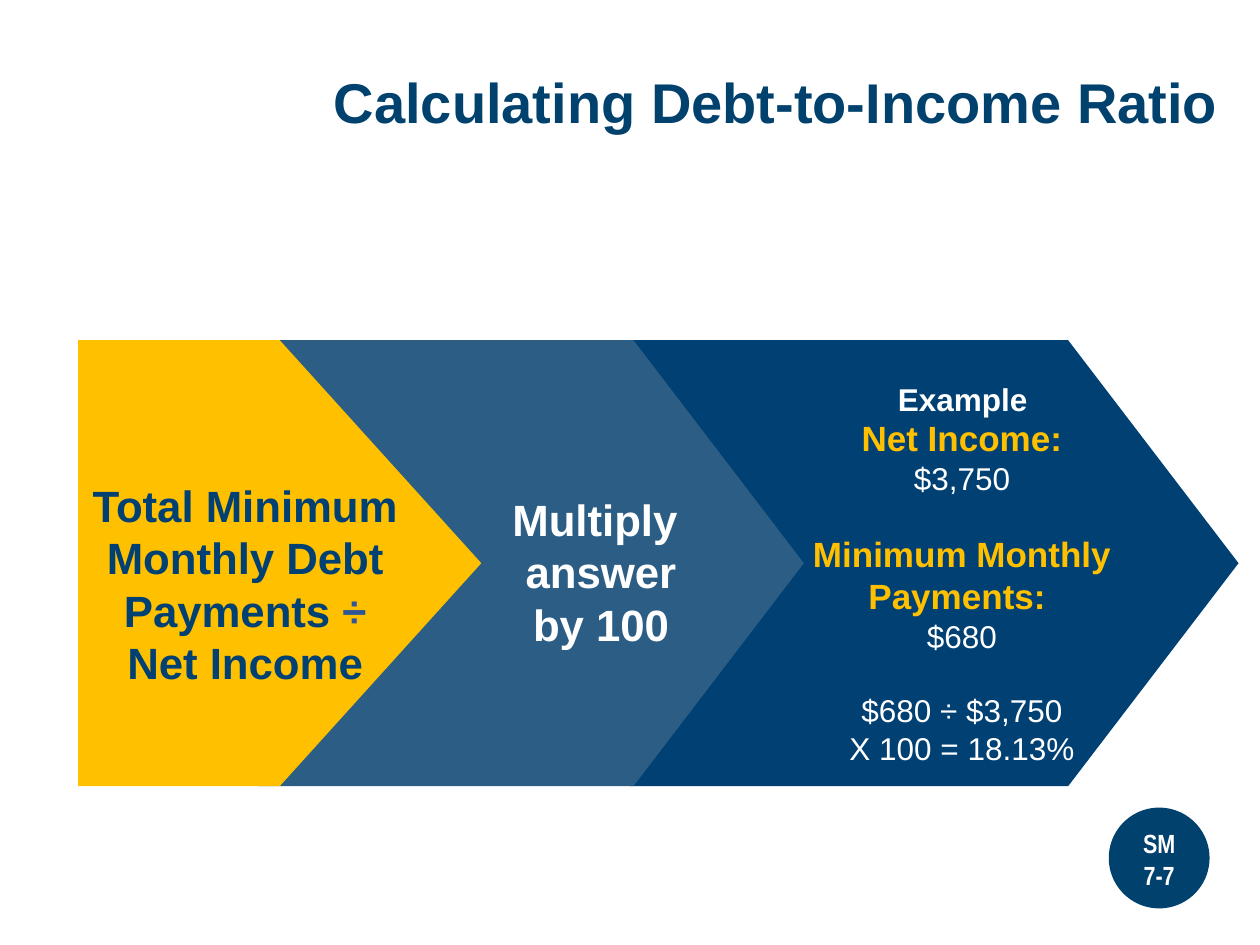
from pptx import Presentation
from pptx import util as u
from pptx.dml import color
from pptx.enum import shapes, text

NAVY, DEEP, STEEL = "004072", "00416D", "2C5D85"
GOLD, BLUE, WHITE = "FFC000", "2E5597", "FFFFFF"


def rgb(code):
    return color.RGBColor.from_string(code)


def write(frame, paras, size=18, ink=WHITE, bold=True, font="Arial",
          align=text.PP_ALIGN.CENTER, gaps=None, line=None):
    """Fill a frame; a paragraph is a string or a list of (text, format) runs."""
    for i, para in enumerate(paras):
        p = frame.paragraphs[0] if i == 0 else frame.add_paragraph()
        p.alignment = align
        if line:
            p.line_spacing = line
        if gaps and i in gaps:
            p.space_before = u.Pt(gaps[i])
        for words, form in [(para, {})] if isinstance(para, str) else para:
            for n, part in enumerate(words.split("\n")):
                if n:
                    p.add_line_break()
                if not part:
                    continue
                run = p.add_run()
                run.text = part
                run.font.name = font
                run.font.size = u.Pt(form.get("size", size))
                run.font.bold = form.get("bold", bold)
                run.font.color.rgb = rgb(form.get("ink", ink))


class Deck:
    def __init__(self):
        self.prs = Presentation()
        self.prs.slide_width, self.prs.slide_height = u.Inches(10), u.Inches(7.5)
        self.slide = self.prs.slides.add_slide(self.prs.slide_layouts[5])

    def title(self, words, box):
        shape = self.slide.shapes.title
        shape.left, shape.top, shape.width, shape.height = map(u.Inches, box)
        frame = shape.text_frame
        frame.auto_size = text.MSO_AUTO_SIZE.NONE
        frame.vertical_anchor = text.MSO_ANCHOR.MIDDLE
        write(frame, [words], size=32, ink=DEEP,
              align=text.PP_ALIGN.LEFT, line=0.9)

    def block(self, kind, box, fill, adj=None):
        shape = self.slide.shapes.add_shape(kind, *map(u.Inches, box))
        shape.shadow.inherit = False
        shape.fill.solid()
        shape.fill.fore_color.rgb = rgb(fill)
        shape.line.fill.background()
        if adj is not None:
            shape.adjustments[0] = adj

    def label(self, paras, box, wrap=True, **form):
        shape = self.slide.shapes.add_textbox(*map(u.Inches, box))
        shape.text_frame.word_wrap = wrap
        write(shape.text_frame, paras, **form)


def main():
    deck = Deck()
    deck.title("Calculating Debt-to-Income Ratio", (2.55, 0.3, 7.5, 1.07))

    # Overlapping arrows, rightmost at the back
    for left, width, fill, adj in [(5, 4.83, NAVY, 0.382),
                                   (2.05, 4.33, STEEL, 0.382),
                                   (0.62, 3.2, GOLD, 0.5)]:
        deck.block(shapes.MSO_SHAPE.PENTAGON, (left, 2.7, width, 3.54), fill, adj)

    # Steps
    deck.label(["Total Minimum",
                [("Monthly Debt Payments ", {}), ("÷", {"ink": BLUE})],
                "Net Income"], (0.62, 3.75, 2.65, 1.78), size=25, ink=NAVY)
    deck.label(["Multiply ", "answer", "by 100"],
               (3.35, 3.86, 2.84, 1.36), size=25)

    # Worked example
    head = {"size": 20, "ink": GOLD, "bold": True}
    deck.label([[("Net Income:", head)],
                "$3,750",
                [("Minimum Monthly Payments: \n", head), ("$680", {})],
                "$680 ÷ $3,750",
                "X 100 = 18.13%"],
               (5.95, 3.26, 3.37, 3.23), bold=False, gaps={2: 20.7, 3: 20.7})
    deck.label(["Example"], (7.02, 2.97, 1.24, 0.4), wrap=False)

    # Page badge
    deck.block(shapes.MSO_SHAPE.OVAL, (8.8, 6.41, 0.8, 0.8), DEEP)
    deck.label(["SM\n7-7"], (8.8, 6.52, 0.8, 0.61), size=15, font="Arial Narrow")

    deck.prs.save("out.pptx")


if __name__ == "__main__":
    main()
